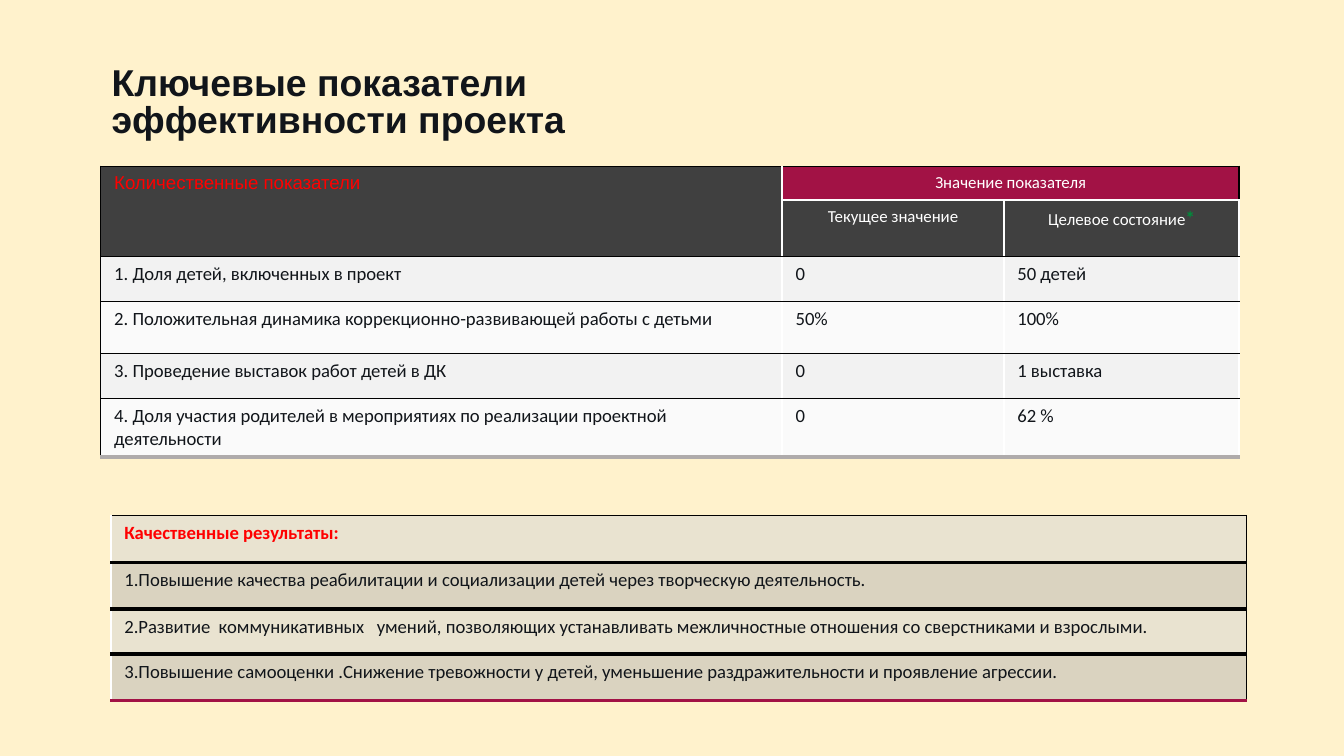
from dataclasses import dataclass
from lxml.etree import SubElement
from pptx import Presentation
from pptx.dml.color import RGBColor
from pptx.enum.text import MSO_ANCHOR, MSO_AUTO_SIZE, PP_ALIGN
from pptx.oxml.ns import qn
from pptx.util import Inches, Pt


@dataclass(frozen=True)
class Theme:
    background: str = "FFF2CC"
    ink: str = "11151A"
    black: str = "000000"
    white: str = "FFFFFF"
    red: str = "FF0000"
    green: str = "008C3B"
    crimson: str = "A21245"
    header: str = "404040"
    base: str = "AFABAB"
    metric_bands: tuple = ("F2F2F2", "FAFAFA")
    result_bands: tuple = ("D5D5D5", "B6B6B6")
    heading_font: str = "Arial"
    body_font: str = "Calibri"
    title_size: float = 20
    body_size: float = 10
    header_size: float = 9
    mark_size: float = 10.5


THEME = Theme()
SLIDE_WIDTH = Inches(10)
SLIDE_HEIGHT = SLIDE_WIDTH * 9 // 16
METRIC_COLUMNS = (50.7, 16.5, 17.5)
METRIC_ROWS = (4.4, 7.45, 5.9, 6.9, 6, 7.65)
RESULT_ROWS = (6.2, 6.2, 5.9, 6.2)
METRICS = (
    ("1. Доля детей, включенных в проект", "0", "50 детей"),
    ("2. Положительная динамика коррекционно-развивающей работы с детьми", "50%", "100%"),
    ("3. Проведение выставок работ детей в ДК", "0", "1 выставка"),
    ("4. Доля участия родителей в мероприятиях по реализации проектной деятельности", "0", "62 %"),
)
RESULTS = (
    "Качественные результаты:",
    "1.Повышение качества реабилитации и социализации детей через творческую деятельность.",
    "2.Развитие  коммуникативных   умений, позволяющих устанавливать межличностные отношения со сверстниками и взрослыми.",
    "3.Повышение самооценки .Снижение тревожности у детей, уменьшение раздражительности и проявление агрессии.",
)


def across(percent):
    return round(SLIDE_WIDTH * percent / 100)


def down(percent):
    return round(SLIDE_HEIGHT * percent / 100)


def write(frame, text, size=THEME.body_size, color=THEME.ink, font=THEME.body_font,
          bold=False, align=PP_ALIGN.LEFT, spacing=None, after=0, append=False):
    for index, line in enumerate(text.split("\n")):
        paragraph = frame.paragraphs[-1] if append or index == 0 else frame.add_paragraph()
        paragraph.alignment = align
        paragraph.space_after = Pt(after)
        if spacing:
            paragraph.line_spacing = Pt(spacing)
        run = paragraph.add_run()
        run.text = line
        run.font.size = Pt(size)
        run.font.name = font
        run.font.bold = bold
        run.font.color.rgb = RGBColor.from_string(color)


def set_borders(cell, edges):
    properties = cell._tc.get_or_add_tcPr()
    for side, (color, width) in zip("LRTB", edges):
        line = SubElement(properties, qn(f"a:ln{side}"), w=str(Pt(width)))
        SubElement(SubElement(line, qn("a:solidFill")), qn("a:srgbClr"), val=color)


def paint(cell, color, edges, opacity=100):
    set_borders(cell, edges)
    cell.fill.solid()
    cell.fill.fore_color.rgb = RGBColor.from_string(color)
    if opacity < 100:
        tint = cell._tc.tcPr.find(qn("a:solidFill")).find(qn("a:srgbClr"))
        SubElement(tint, qn("a:alpha"), val=str(opacity * 1000))


def add_grid(slide, left, top, columns, rows):
    frame = slide.shapes.add_table(len(rows), len(columns), across(left), down(top),
                                   across(sum(columns)), down(sum(rows)))
    grid = frame.table
    grid.first_row = grid.horz_banding = False
    for column, share in zip(grid.columns, columns):
        column.width = across(share)
    for row, share in zip(grid.rows, rows):
        row.height = down(share)
    return grid


def metric_edges(row, column):
    hairline, thin = (THEME.black, 0.23), (THEME.black, 0.75)
    gap, header_gap = (THEME.white, 1.47), (THEME.white, 0.96)
    left = gap if column else thin
    right = (THEME.black, 1.47) if row == 0 and column else gap
    top = (header_gap if row == 1 and column else thin) if row < 3 else hairline
    bottom = hairline
    if row < 2:
        bottom = header_gap if row == 0 and column else thin
    elif row == len(METRIC_ROWS) - 1:
        bottom = (THEME.base, 2.21)
    return left, right, top, bottom


def add_title(slide):
    title = slide.shapes.title
    title.left, title.top = across(8.3), down(3.75)
    title.width, title.height = across(63.2), down(12.45)
    frame = title.text_frame
    frame.word_wrap = True
    frame.auto_size = MSO_AUTO_SIZE.NONE
    frame.vertical_anchor = MSO_ANCHOR.TOP
    frame.margin_left = frame.margin_right = frame.margin_bottom = 0
    frame.margin_top = down(5)
    write(frame, "Ключевые показатели\nэффективности проекта", size=THEME.title_size,
          font=THEME.heading_font, bold=True, spacing=THEME.title_size, after=0.1)


def add_metrics(slide):
    grid = add_grid(slide, 7.5, 22, METRIC_COLUMNS, METRIC_ROWS)
    for row in range(len(METRIC_ROWS)):
        for column in range(len(METRIC_COLUMNS)):
            color = THEME.header if row < 2 else THEME.metric_bands[row % 2]
            if row == 0 and column:
                color = THEME.crimson
            paint(grid.cell(row, column), color, metric_edges(row, column))
    grid.cell(0, 0).merge(grid.cell(1, 0))
    grid.cell(0, 1).merge(grid.cell(0, 2))
    write(grid.cell(0, 0).text_frame, "Количественные показатели",
          color=THEME.red, font=THEME.heading_font)
    headings = {(0, 1): "Значение показателя", (1, 1): "Текущее значение",
                (1, 2): "Целевое состояние"}
    for place, heading in headings.items():
        write(grid.cell(*place).text_frame, heading, size=THEME.header_size,
              color=THEME.white, align=PP_ALIGN.CENTER)
    write(grid.cell(1, 2).text_frame, "*", size=THEME.mark_size, color=THEME.green,
          bold=True, align=PP_ALIGN.CENTER, append=True)
    for row, metric in enumerate(METRICS, start=2):
        for column, value in enumerate(metric):
            write(grid.cell(row, column).text_frame, value)


def add_results(slide):
    grid = add_grid(slide, 8.25, 68.2, (84.5,), RESULT_ROWS)
    rule = (THEME.black, 2.21)
    for row, result in enumerate(RESULTS):
        heading = row == 0
        top = (THEME.black, 0.96) if heading else rule
        bottom = (THEME.crimson, 2.21) if row == len(RESULTS) - 1 else rule
        cell = grid.cell(row, 0)
        paint(cell, THEME.result_bands[row % 2],
              ((THEME.white, 0.75), (THEME.black, 0.75), top, bottom), opacity=50)
        write(cell.text_frame, result, bold=heading,
              color=THEME.red if heading else THEME.ink)


def main():
    deck = Presentation()
    deck.slide_width, deck.slide_height = SLIDE_WIDTH, SLIDE_HEIGHT
    slide = deck.slides.add_slide(deck.slide_layouts.get_by_name("Title Only"))
    slide.background.fill.solid()
    slide.background.fill.fore_color.rgb = RGBColor.from_string(THEME.background)
    add_title(slide)
    add_metrics(slide)
    add_results(slide)
    deck.save("out.pptx")


if __name__ == "__main__":
    main()
